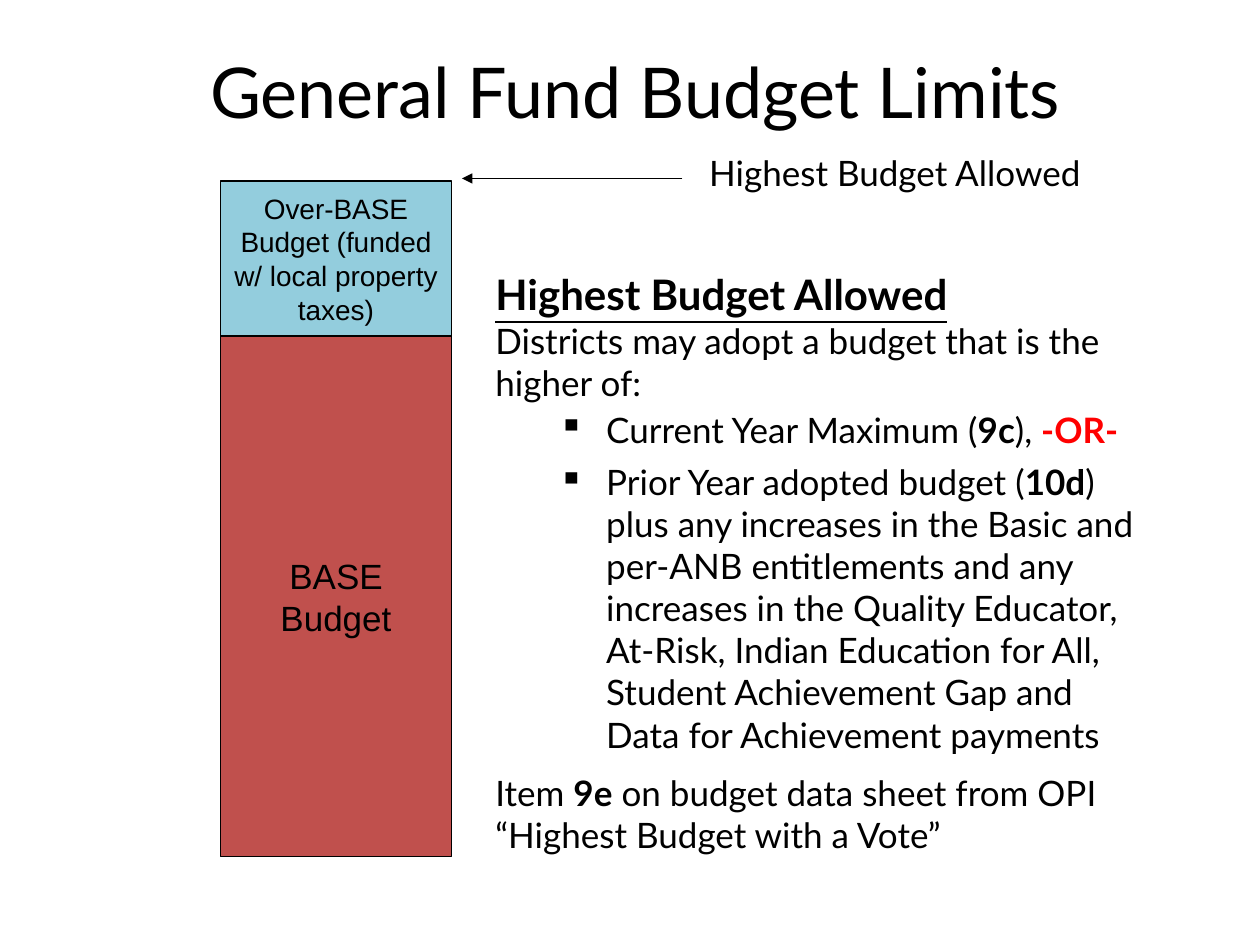
import pptx
import pptx.dml.color
import pptx.enum.shapes
import pptx.enum.text
import pptx.oxml
import pptx.oxml.ns
import pptx.util

RGBColor = pptx.dml.color.RGBColor
BLACK = RGBColor(0x00, 0x00, 0x00)
RED = RGBColor(0xFF, 0x00, 0x00)
BRICK = RGBColor(0xC0, 0x50, 0x4D)
SKY = RGBColor(0x93, 0xCD, 0xDD)

COLUMNS = 120
WIDTH = pptx.util.Inches(10)
HEIGHT = pptx.util.Inches(7.5)
UNIT = WIDTH // COLUMNS

STACK_LEFT, STACK_WIDTH = 21, 22
STACK_TOP, STACK_SPLIT, STACK_BOTTOM = 17.25, 32, 81.6
CENTER = pptx.enum.text.PP_ALIGN.CENTER


def grid(*cells):
    return [round(cell * UNIT) for cell in cells]


def format_run(run, size, font="Lato", bold=False, color=BLACK):
    run.font.name = font
    run.font.size = pptx.util.Pt(size)
    run.font.bold = bold
    run.font.color.rgb = color


def add_budget_block(slide, top, bottom, label, size, color):
    block = slide.shapes.add_shape(
        pptx.enum.shapes.MSO_SHAPE.RECTANGLE,
        *grid(STACK_LEFT, top, STACK_WIDTH, bottom - top))
    block.shadow.inherit = False
    block.fill.solid()
    block.fill.fore_color.rgb = color
    block.line.color.rgb = BLACK
    block.line.width = pptx.util.Pt(0.75)
    frame = block.text_frame
    frame.text = label
    frame.word_wrap = True
    frame.vertical_anchor = pptx.enum.text.MSO_ANCHOR.MIDDLE
    frame.paragraphs[0].alignment = CENTER
    format_run(frame.paragraphs[0].runs[0], size, "Arial")


def add_text_area(slide, *cells):
    frame = slide.shapes.add_textbox(*grid(*cells)).text_frame
    frame.word_wrap = True
    return frame


def add_caption(slide, wording, size, *cells):
    frame = add_text_area(slide, *cells)
    frame.text = wording
    frame.paragraphs[0].alignment = CENTER
    format_run(frame.paragraphs[0].runs[0], size)


def add_paragraph(frame, *pieces, before=0, after=0):
    paragraph = frame.add_paragraph()
    paragraph.space_before = pptx.util.Pt(before)
    paragraph.space_after = pptx.util.Pt(after)
    for wording, bold, color in pieces:
        run = paragraph.add_run()
        run.text = wording
        format_run(run, 20, bold=bold, color=color)
    return paragraph


def make_bullet(paragraph):
    paragraph.level = 1
    properties = paragraph._p.get_or_add_pPr()
    properties.set("marL", str(pptx.util.Inches(0.88)))
    properties.set("indent", str(pptx.util.Inches(-0.38)))
    mark = pptx.oxml.parse_xml(
        f'<a:buChar {pptx.oxml.ns.nsdecls("a")} char="▪"/>')
    properties.append(mark)


def add_explanation(slide):
    frame = add_text_area(slide, 46, 25, 65, 57.6)
    frame.text = "Highest Budget Allowed"
    heading = frame.paragraphs[0].runs[0]
    format_run(heading, 24, bold=True)
    heading.font.underline = True

    add_paragraph(frame, ("Districts may adopt a budget that is the higher of:", False, BLACK))
    make_bullet(add_paragraph(
        frame,
        ("Current Year Maximum (", False, BLACK),
        ("9c", True, BLACK),
        ("), ", False, BLACK),
        ("-OR-", True, RED),
        before=3, after=6))
    make_bullet(add_paragraph(
        frame,
        ("Prior Year adopted budget (", False, BLACK),
        ("10d", True, BLACK),
        (") plus any increases in the Basic and per-ANB entitlements and any "
         "increases in the Quality Educator, At-Risk, Indian Education for All, "
         "Student Achievement Gap and Data for Achievement payments", False, BLACK)))
    add_paragraph(
        frame,
        ("Item ", False, BLACK),
        ("9e", True, BLACK),
        (" on budget data sheet from OPI", False, BLACK),
        before=9.6)
    add_paragraph(frame, ("“Highest Budget with a Vote”", False, BLACK))


def add_limit_arrow(slide):
    arrow = slide.shapes.add_connector(
        pptx.enum.shapes.MSO_CONNECTOR.STRAIGHT, *grid(65, 17, 44, 17))
    arrow.line.color.rgb = BLACK
    arrow.line.width = pptx.util.Pt(0.75)
    namespace = pptx.oxml.ns.nsdecls("a")
    arrow.line._get_or_add_ln().append(
        pptx.oxml.parse_xml(f'<a:tailEnd {namespace} type="triangle"/>'))
    arrow._element.spPr.append(pptx.oxml.parse_xml(f"<a:effectLst {namespace}/>"))


def main():
    deck = pptx.Presentation()
    deck.slide_width, deck.slide_height = WIDTH, HEIGHT
    slide = deck.slides.add_slide(deck.slide_layouts[6])
    add_budget_block(slide, STACK_SPLIT, STACK_BOTTOM, "BASE Budget", 20, BRICK)
    add_caption(slide, "General Fund Budget Limits", 40, 3, 4, 115, 9.25)
    add_explanation(slide)
    add_caption(slide, " Highest Budget Allowed", 20, 59.3, 13.8, 51, 5.3)
    add_limit_arrow(slide)
    add_budget_block(slide, STACK_TOP, STACK_SPLIT,
                     "Over-BASE Budget (funded w/ local property taxes)", 16, SKY)
    deck.save("out.pptx")


if __name__ == "__main__":
    main()
